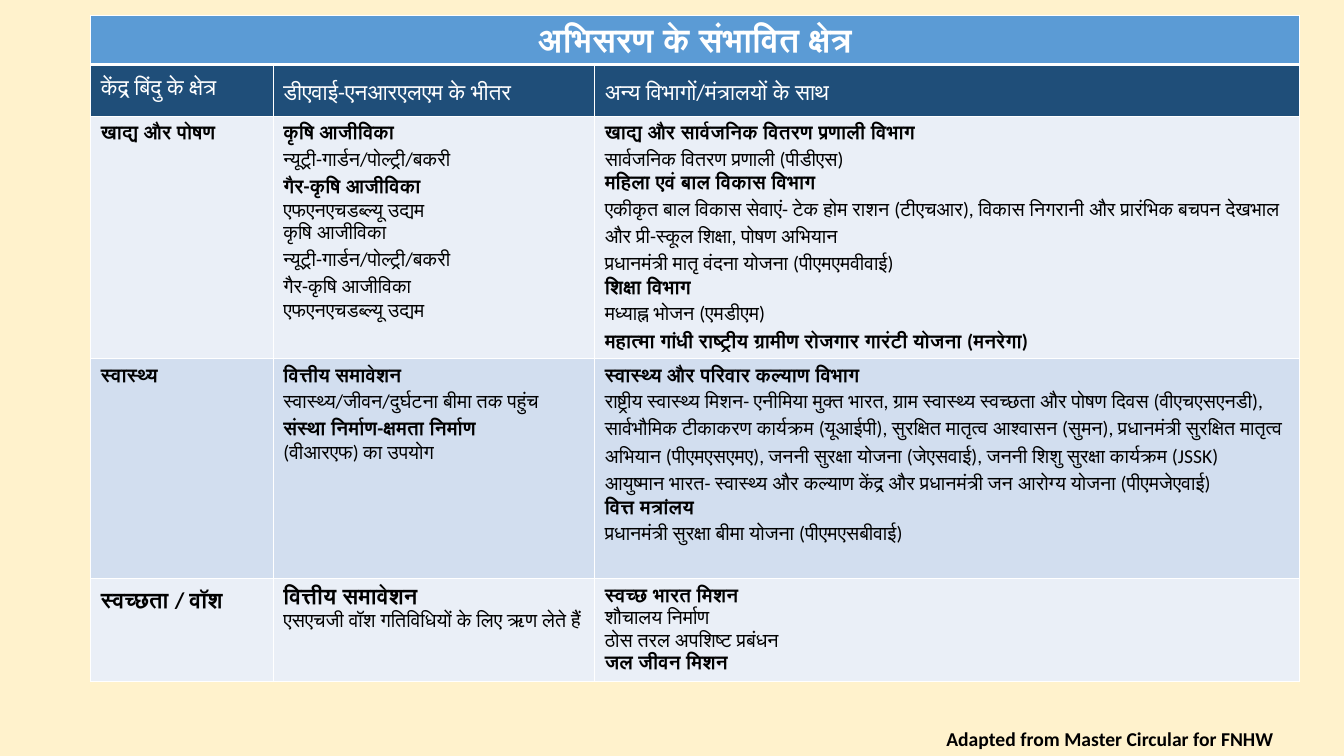
from dataclasses import dataclass

from lxml.etree import SubElement
from pptx import Presentation
from pptx.dml.color import RGBColor
from pptx.enum.text import MSO_AUTO_SIZE, PP_ALIGN as Align
from pptx.oxml.ns import qn
from pptx.util import Pt

FONT = "Calibri"
WHITE, BLACK, CREAM = "FFFFFF", "000000", "FFF2CC"
SKY, NAVY, PALE, MIST = "5B9BD5", "1F4E79", "EAEFF7", "D2DEEF"
COLUMN_WIDTHS = [130.4, 229.6, 503.3]
ROW_HEIGHTS = [35.3, 35.3, 157, 157, 73.4]


@dataclass
class Line:
    text: str
    bold: bool = False
    size: int = 14
    color: str = BLACK
    spacing: float = 1.15
    align: Align = Align.LEFT


def head(text, size=14):
    return Line(text, bold=True, size=size)


TITLE = Line("अभिसरण के संभावित क्षेत्र", True, 24, WHITE, align=Align.CENTER)
HEADINGS = ["केंद्र बिंदु के क्षेत्र", "डीएवाई-एनआरएलएम के भीतर", "अन्य विभागों/मंत्रालयों के साथ"]

FOOD = [
    [head("खाद्य और पोषण")],
    [
        head("कृषि आजीविका"),
        Line("न्यूट्री-गार्डन/पोल्ट्री/बकरी"),
        head("गैर-कृषि आजीविका"),
        Line("एफएनएचडब्ल्यू उद्यम"),
        Line("कृषि आजीविका"),
        Line("न्यूट्री-गार्डन/पोल्ट्री/बकरी"),
        Line("गैर-कृषि आजीविका"),
        Line("एफएनएचडब्ल्यू उद्यम"),
    ],
    [
        head("खाद्य और सार्वजनिक वितरण प्रणाली विभाग"),
        Line("सार्वजनिक वितरण प्रणाली (पीडीएस)"),
        head("महिला एवं बाल विकास विभाग"),
        Line("एकीकृत बाल विकास सेवाएं- टेक होम राशन (टीएचआर), विकास निगरानी और "
             "प्रारंभिक बचपन देखभाल और प्री-स्कूल शिक्षा, पोषण अभियान"),
        Line("प्रधानमंत्री मातृ वंदना योजना (पीएमएमवीवाई)"),
        head("शिक्षा विभाग"),
        Line("मध्याह्न भोजन (एमडीएम)"),
        head("महात्मा गांधी राष्ट्रीय ग्रामीण रोजगार गारंटी योजना (मनरेगा)"),
    ],
]
HEALTH = [
    [head("स्वास्थ्य")],
    [
        head("वित्तीय समावेशन"),
        Line("स्वास्थ्य/जीवन/दुर्घटना बीमा तक पहुंच"),
        head("संस्था निर्माण-क्षमता निर्माण"),
        Line("(वीआरएफ) का उपयोग", spacing=1.0),
    ],
    [
        head("स्वास्थ्य और परिवार कल्याण विभाग"),
        Line("राष्ट्रीय स्वास्थ्य मिशन- एनीमिया मुक्त भारत, ग्राम स्वास्थ्य स्वच्छता और पोषण दिवस "
             "(वीएचएसएनडी), सार्वभौमिक टीकाकरण कार्यक्रम (यूआईपी), सुरक्षित मातृत्व आश्वासन "
             "(सुमन), प्रधानमंत्री सुरक्षित मातृत्व अभियान (पीएमएसएमए), जननी सुरक्षा योजना "
             "(जेएसवाई), जननी शिशु सुरक्षा कार्यक्रम (JSSK)"),
        Line("आयुष्मान भारत- स्वास्थ्य और कल्याण केंद्र और प्रधानमंत्री जन आरोग्य योजना (पीएमजेएवाई)"),
        head("वित्त मत्रांलय"),
        Line("प्रधानमंत्री सुरक्षा बीमा योजना (पीएमएसबीवाई)"),
    ],
]
SANITATION = [
    [head("स्वच्छता / वॉश", 16)],
    [head("वित्तीय समावेशन", 16), Line("एसएचजी वॉश गतिविधियों के लिए ऋण लेते हैं")],
    [
        head("स्वच्छ भारत मिशन"),
        Line("शौचालय निर्माण"),
        Line("ठोस तरल अपशिष्ट प्रबंधन"),
        head("जल जीवन मिशन"),
    ],
]


def paint(fill, color):
    fill.solid()
    fill.fore_color.rgb = RGBColor.from_string(color)


def write_lines(frame, lines):
    for index, line in enumerate(lines):
        para = frame.paragraphs[0] if index == 0 else frame.add_paragraph()
        para.text = line.text
        para.alignment = line.align
        para.line_spacing = line.spacing
        para.font.name = FONT
        para.font.size = Pt(line.size)
        para.font.bold = line.bold
        para.font.color.rgb = RGBColor.from_string(line.color)


def set_borders(cell, top=1, bottom=1):
    properties = cell._tc.get_or_add_tcPr()
    for side, width in (("L", 1), ("R", 1), ("T", top), ("B", bottom)):
        border = SubElement(properties, qn(f"a:ln{side}"), w=str(Pt(width)))
        solid = SubElement(border, qn("a:solidFill"))
        SubElement(solid, qn("a:srgbClr"), val=WHITE)


def fill_cell(cell, lines, color, margin=None, top=1, bottom=1):
    # Borders come before the fill in the cell properties
    set_borders(cell, top, bottom)
    paint(cell.fill, color)
    if margin is not None:
        cell.margin_left = cell.margin_right = Pt(margin)
        cell.margin_top = cell.margin_bottom = Pt(margin)
    write_lines(cell.text_frame, lines)


def add_convergence_table(page):
    frame = page.shapes.add_table(
        len(ROW_HEIGHTS), len(COLUMN_WIDTHS), Pt(64.8), Pt(10.8),
        Pt(sum(COLUMN_WIDTHS)), Pt(sum(ROW_HEIGHTS)))
    table = frame.table
    for column, width in zip(table.columns, COLUMN_WIDTHS):
        column.width = Pt(width)
    for row, height in zip(table.rows, ROW_HEIGHTS):
        row.height = Pt(height)

    # Title across all columns
    table.cell(0, 0).merge(table.cell(0, len(COLUMN_WIDTHS) - 1))
    for cell in table.rows[0].cells:
        lines = [TITLE] if cell.is_merge_origin else []
        fill_cell(cell, lines, SKY, bottom=3)

    # Column headings
    for cell, text in zip(table.rows[1].cells, HEADINGS):
        fill_cell(cell, [Line(text, size=16, color=WHITE)], NAVY, margin=7.2, top=3)

    # Focus areas in alternating shades
    for index, area in enumerate([FOOD, HEALTH, SANITATION]):
        shade = MIST if index % 2 else PALE
        for cell, lines in zip(table.rows[index + 2].cells, area):
            fill_cell(cell, lines, shade)


def add_credit(page):
    box = page.shapes.add_textbox(Pt(668.9), Pt(515.5), Pt(291.6), Pt(24.5))
    frame = box.text_frame
    frame.word_wrap = True
    frame.auto_size = MSO_AUTO_SIZE.SHAPE_TO_FIT_TEXT
    write_lines(frame, [Line("Adapted from Master Circular for FNHW", True, spacing=1.0)])


def main():
    deck = Presentation()
    deck.slide_width, deck.slide_height = Pt(960), Pt(540)
    page = deck.slides.add_slide(deck.slide_layouts[6])
    paint(page.background.fill, CREAM)
    add_convergence_table(page)
    add_credit(page)
    deck.save("out.pptx")


if __name__ == "__main__":
    main()
